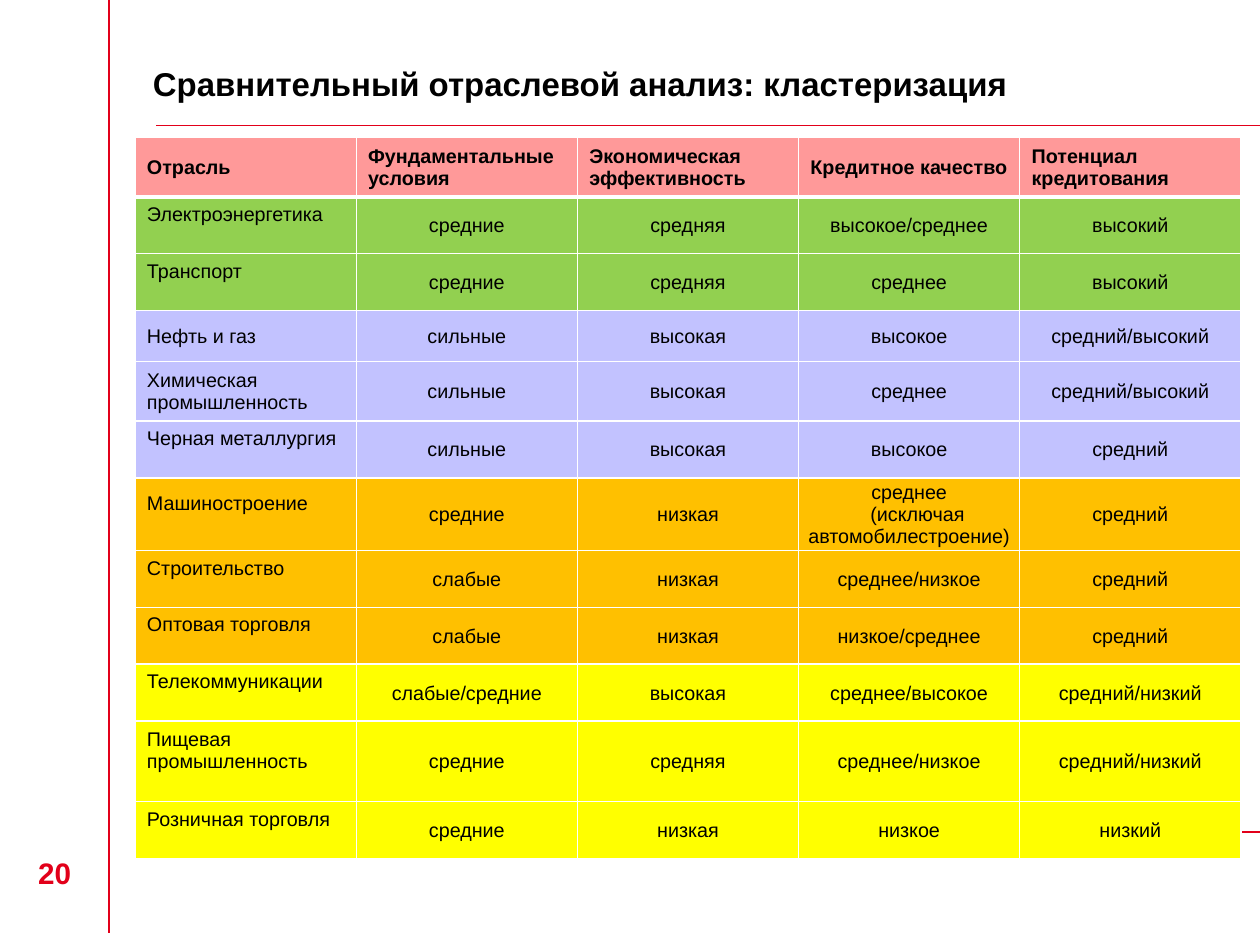
from lxml.etree import SubElement
from pptx import Presentation
from pptx.dml.color import RGBColor
from pptx.enum.shapes import MSO_CONNECTOR
from pptx.enum.text import MSO_ANCHOR, PP_ALIGN
from pptx.oxml.ns import qn
from pptx.util import Inches, Pt

RED, BLACK, WHITE = "E2001A", "000000", "FFFFFF"
PINK, GREEN, LILAC, ORANGE, YELLOW = "FF9999", "92D050", "C2C2FF", "FFC000", "FFFF00"

HEADER = ["Отрасль", "Фундаментальные условия", "Экономическая эффективность",
          "Кредитное качество", "Потенциал кредитования"]
# fill, row height, bottom margin of the industry cell, texts
ROWS = [
    (PINK, 0.46, 0.05, HEADER),
    (GREEN, 0.47, 0.23, ["Электроэнергетика", "средние", "средняя", "высокое/среднее", "высокий"]),
    (GREEN, 0.47, 0.23, ["Транспорт", "средние", "средняя", "среднее", "высокий"]),
    (LILAC, 0.43, 0.05, ["Нефть и газ", "сильные", "высокая", "высокое", "средний/высокий"]),
    (LILAC, 0.47, 0.05, ["Химическая промышленность", "сильные", "высокая", "среднее", "средний/высокий"]),
    (LILAC, 0.47, 0.23, ["Черная металлургия", "сильные", "высокая", "высокое", "средний"]),
    (ORANGE, 0.57, 0.23, ["Машиностроение", "средние", "низкая",
                          "среднее\n(исключая автомобилестроение)", "средний"]),
    (ORANGE, 0.47, 0.23, ["Строительство", "слабые", "низкая", "среднее/низкое", "средний"]),
    (ORANGE, 0.47, 0.23, ["Оптовая торговля", "слабые", "низкая", "низкое/среднее", "средний"]),
    (YELLOW, 0.47, 0.23, ["Телекоммуникации", "слабые/средние", "высокая", "среднее/высокое", "средний/низкий"]),
    (YELLOW, 0.66, 0.23, ["Пищевая промышленность", "средние", "средняя", "среднее/низкое", "средний/низкий"]),
    (YELLOW, 0.47, 0.23, ["Розничная торговля", "средние", "низкая", "низкое", "низкий"]),
]


def rgb(color):
    return RGBColor.from_string(color)


def add_run(p, text, size, color, bold):
    r = p.add_run()
    r.text = text
    r.font.name = "Arial"
    r.font.size = Pt(size)
    r.font.bold = bold
    r.font.color.rgb = rgb(color)


prs = Presentation()
prs.slide_width, prs.slide_height = Inches(10.63), Inches(7.87)
s = prs.slides.add_slide(prs.slide_layouts[6])

# Frame lines
for x1, y1, x2, y2 in [(0.92, 0, 0.92, 7.87), (1.32, 1.06, 10.63, 1.06), (1.33, 7.02, 10.63, 7.02)]:
    line = s.shapes.add_connector(MSO_CONNECTOR.STRAIGHT, Inches(x1), Inches(y1), Inches(x2), Inches(y2))
    line.line.color.rgb = rgb(RED)
    line.line.width = Pt(1)
    SubElement(line._element.spPr, qn("a:effectLst"))

# Title and slide number
for box, text, size, color, anchor, align in [
    ((1.29, 0.24, 9.04, 0.92), "Сравнительный отраслевой анализ: кластеризация", 20, BLACK,
     MSO_ANCHOR.MIDDLE, PP_ALIGN.LEFT),
    ((0, 6.99, 0.92, 0.52), "20", 18, RED, MSO_ANCHOR.BOTTOM, PP_ALIGN.CENTER),
]:
    tf = s.shapes.add_textbox(*[Inches(v) for v in box]).text_frame
    tf.word_wrap = True
    tf.vertical_anchor = anchor
    tf.margin_left = tf.margin_right = tf.margin_top = tf.margin_bottom = 0
    tf.paragraphs[0].alignment = align
    add_run(tf.paragraphs[0], text, size, color, True)

# Industry table
height = sum(row[1] for row in ROWS)
table = s.shapes.add_table(len(ROWS), len(HEADER), Inches(1.14), Inches(1.16),
                           Inches(9.33), Inches(height)).table
table.horz_banding = False
for column in table.columns:
    column.width = Inches(9.33 / len(HEADER))

for i, (fill, row_height, industry_bottom, texts) in enumerate(ROWS):
    table.rows[i].height = Inches(row_height)
    for j, text in enumerate(texts):
        cell = table.cell(i, j)
        tcPr = cell._tc.get_or_add_tcPr()
        for side in "LRTB":
            thick = (i, side) in [(0, "B"), (1, "T")]
            ln = SubElement(tcPr, qn("a:ln" + side), w=str(Pt(3 if thick else 1)))
            SubElement(SubElement(ln, qn("a:solidFill")), qn("a:srgbClr"), val=WHITE)
        cell.fill.solid()
        cell.fill.fore_color.rgb = rgb(fill)
        cell.vertical_anchor = MSO_ANCHOR.MIDDLE
        rating = i > 0 and j > 0
        if rating:
            cell.margin_left = cell.margin_right = cell.margin_top = Inches(0.01)
            cell.margin_bottom = 0
        elif j == 0:
            cell.margin_bottom = Inches(industry_bottom)
        tf = cell.text_frame
        for k, part in enumerate(text.split("\n")):
            p = tf.add_paragraph() if k else tf.paragraphs[0]
            p.alignment = PP_ALIGN.CENTER if rating else PP_ALIGN.LEFT
            if k:
                p._p.get_or_add_pPr().set("indent", str(Inches(0.14)))
            add_run(p, part, 12, BLACK, i == 0)

prs.save("out.pptx")
